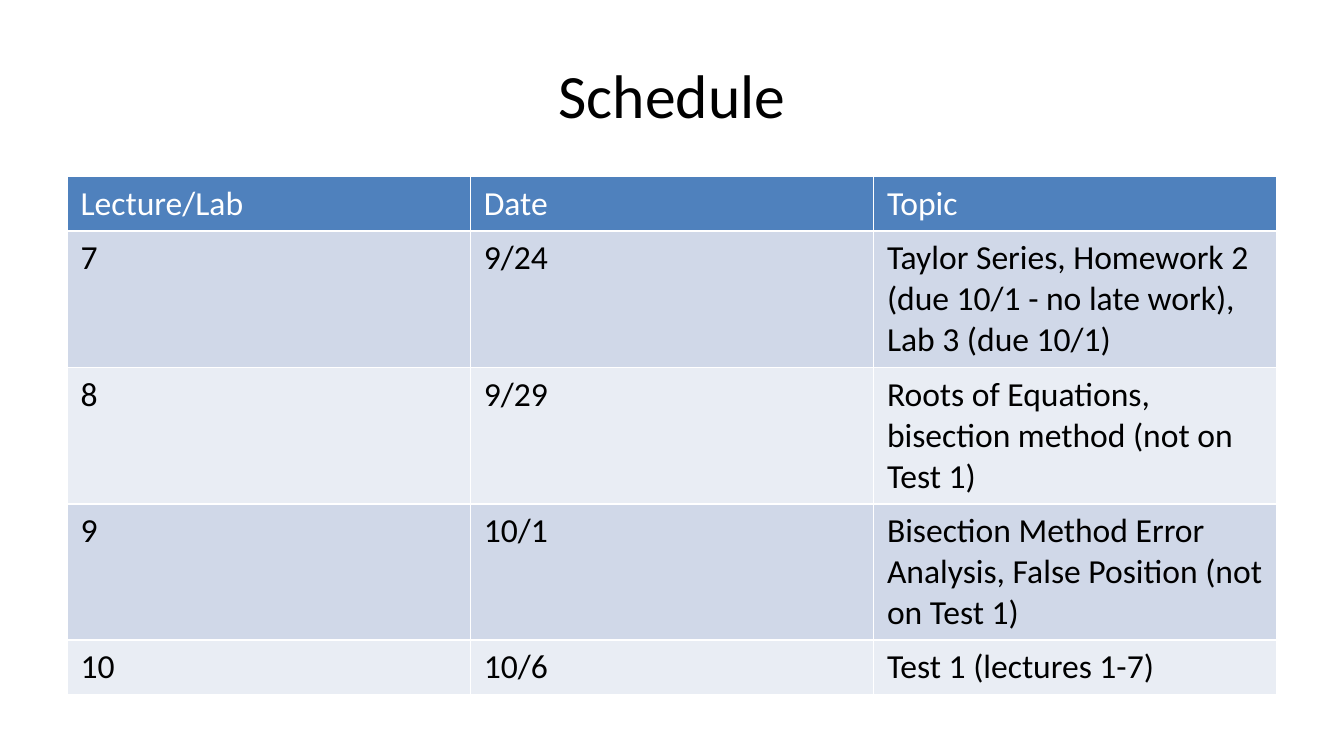
"""Build the course schedule slide."""
from pptx import Presentation
from pptx.dml.color import RGBColor
from pptx.enum.text import MSO_ANCHOR, PP_ALIGN
from pptx.util import Pt

CENTER = PP_ALIGN.CENTER
MIDDLE = MSO_ANCHOR.MIDDLE
COLORS = {"black": "000000", "white": "FFFFFF", "header": "4F81BD",
          "odd": "D0D8E8", "even": "E9EDF4"}
TITLE = {"name": "Calibri", "size": Pt(33), "bold": False}
BODY = {"name": "Calibri", "size": Pt(18), "bold": False}
LEFT, WIDTH = 36, 648
SCHEDULE = [
    ("Lecture/Lab", "Date", "Topic"),
    ("7", "9/24", "Taylor Series, Homework 2 (due 10/1 - no late work), Lab 3 (due 10/1)"),
    ("8", "9/29", "Roots of Equations, bisection method (not on Test 1)"),
    ("9", "10/1", "Bisection Method Error Analysis, False Position (not on Test 1)"),
    ("10", "10/6", "Test 1 (lectures 1-7)"),
]
ROW_HEIGHTS = [29.2, 73.1, 73.1, 73.1, 29.2]


def write(p, text, color, formats):
    r = p.add_run()
    r.text = text
    for name, value in formats.items():
        setattr(r.font, name, value)
    r.font.color.rgb = RGBColor.from_string(COLORS[color])


def add_title(s, text):
    sp = s.shapes.add_textbox(Pt(LEFT), Pt(16.5), Pt(WIDTH), Pt(67.5))
    tf = sp.text_frame
    tf.word_wrap = True
    tf.vertical_anchor = MIDDLE
    p = tf.paragraphs[0]
    p.alignment = CENTER
    write(p, text, "black", TITLE)


def add_schedule(s, rows, heights):
    columns = len(rows[0])
    table = s.shapes.add_table(len(rows), columns, Pt(LEFT), Pt(94.5),
                               Pt(WIDTH), Pt(sum(heights))).table
    for column in table.columns:
        column.width = Pt(WIDTH / columns)
    for i, (texts, height) in enumerate(zip(rows, heights)):
        table.rows[i].height = Pt(height)
        fill = "header" if i == 0 else "odd" if i % 2 else "even"
        color = "black" if i else "white"
        for cell, text in zip(table.rows[i].cells, texts):
            cell.fill.solid()
            cell.fill.fore_color.rgb = RGBColor.from_string(COLORS[fill])
            write(cell.text_frame.paragraphs[0], text, color, BODY)


def main():
    prs = Presentation()
    prs.slide_width, prs.slide_height = Pt(720), Pt(405)
    s = prs.slides.add_slide(prs.slide_layouts[6])
    add_title(s, "Schedule")
    add_schedule(s, SCHEDULE, ROW_HEIGHTS)
    prs.save("out.pptx")


if __name__ == "__main__":
    main()
